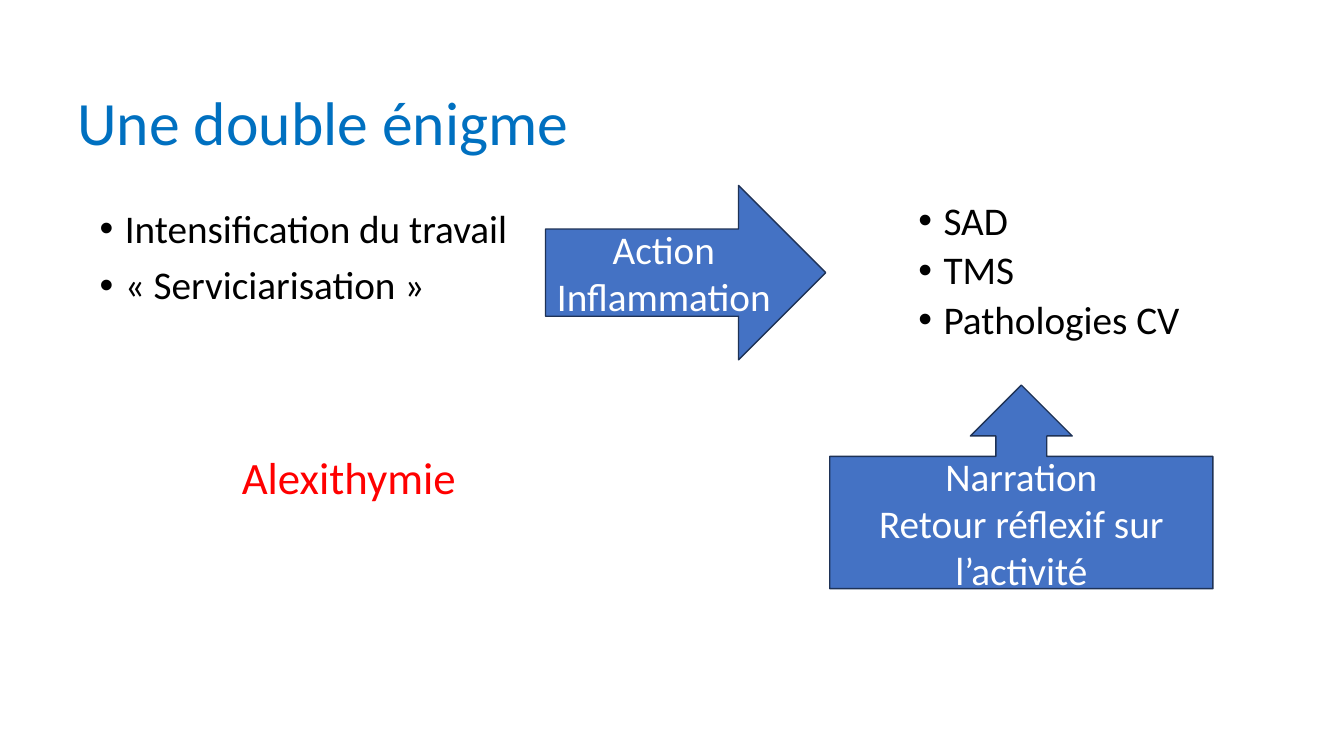
from dataclasses import dataclass

from lxml.etree import SubElement
from pptx import Presentation
from pptx.dml.color import RGBColor
from pptx.enum.shapes import MSO_SHAPE as Preset
from pptx.enum.text import MSO_ANCHOR as Anchor, PP_ALIGN as Align
from pptx.oxml.ns import qn
from pptx.slide import Slide
from pptx.text.text import TextFrame
from pptx.util import Inches, Pt

Area = tuple[float, float, float, float]
BLACK, WHITE, RED = "000000", "FFFFFF", "FF0000"
TITLE_BLUE, ARROW_BLUE, OUTLINE = "0070C0", "4472C4", "1E3256"
HANGING = 0.25


@dataclass
class TextBlock:
    area: Area
    lines: list[str]
    size: int
    color: str
    align: Align = Align.LEFT
    anchor: Anchor = Anchor.TOP
    line_spacing: float = 1.0
    space_before: int = 0
    bullet_indent: float = 0


@dataclass
class Arrow:
    preset: Preset
    text: TextBlock


def rgb(value: str) -> RGBColor:
    return RGBColor.from_string(value)


def set_all(target: object, values: dict) -> None:
    for name, value in values.items():
        setattr(target, name, value)


def write_text(frame: TextFrame, block: TextBlock) -> None:
    set_all(frame, {"word_wrap": True, "vertical_anchor": block.anchor})
    for index, line in enumerate(block.lines):
        para = frame.add_paragraph() if index else frame.paragraphs[0]
        set_all(para, {
            "alignment": block.align,
            "line_spacing": block.line_spacing,
            "space_before": Pt(block.space_before),
        })
        if block.bullet_indent:
            properties = para._p.get_or_add_pPr()
            properties.set("marL", str(Inches(block.bullet_indent)))
            properties.set("indent", str(-Inches(HANGING)))
            SubElement(properties, qn("a:buFont"), typeface="Arial")
            SubElement(properties, qn("a:buChar"), char="•")
        span = para.add_run()
        span.text = line
        set_all(span.font, {"name": "Calibri", "size": Pt(block.size)})
        span.font.color.rgb = rgb(block.color)


def draw_text(page: Slide, block: TextBlock) -> None:
    box = page.shapes.add_textbox(*map(Inches, block.area))
    write_text(box.text_frame, block)


def draw_arrow(page: Slide, arrow: Arrow) -> None:
    shape = page.shapes.add_shape(arrow.preset, *map(Inches, arrow.text.area))
    shape.shadow.inherit = False
    shape.fill.solid()
    shape.fill.fore_color.rgb = rgb(ARROW_BLUE)
    shape.line.color.rgb = rgb(OUTLINE)
    shape.line.width = Pt(1)
    write_text(shape.text_frame, arrow.text)


TEXTS = [
    TextBlock((0.33, 0.52, 5.75, 1.45), ["Une double énigme"], 44, TITLE_BLUE,
              Align.CENTER, Anchor.MIDDLE, 0.9),
    TextBlock((8.51, 1.95, 3.51, 1.73), ["SAD", "TMS", "Pathologies CV"], 28, BLACK,
              line_spacing=0.9, space_before=5, bullet_indent=0.75),
    TextBlock((0.89, 2.03, 4.26, 1.35),
              ["Intensification du travail", "« Serviciarisation »"], 28, BLACK,
              line_spacing=0.9, space_before=10, bullet_indent=0.25),
    TextBlock((2.3, 4.41, 4.37, 1.18), ["Alexithymie"], 32, RED),
]
ARROWS = [
    Arrow(Preset.RIGHT_ARROW,
          TextBlock((5.41, 1.84, 2.78, 1.73), ["Action", "Inflammation"], 28, WHITE,
                    Align.CENTER, Anchor.MIDDLE)),
    Arrow(Preset.UP_ARROW_CALLOUT,
          TextBlock((8.23, 3.82, 3.8, 2.02),
                    ["Narration", "Retour réflexif sur l’activité"], 28, WHITE,
                    Align.CENTER, Anchor.MIDDLE)),
]


def main() -> None:
    deck = Presentation()
    set_all(deck, {"slide_width": Inches(13.33), "slide_height": Inches(7.5)})
    page = deck.slides.add_slide(deck.slide_layouts[6])
    for block in TEXTS:
        draw_text(page, block)
    for arrow in ARROWS:
        draw_arrow(page, arrow)
    deck.save("out.pptx")


if __name__ == "__main__":
    main()
